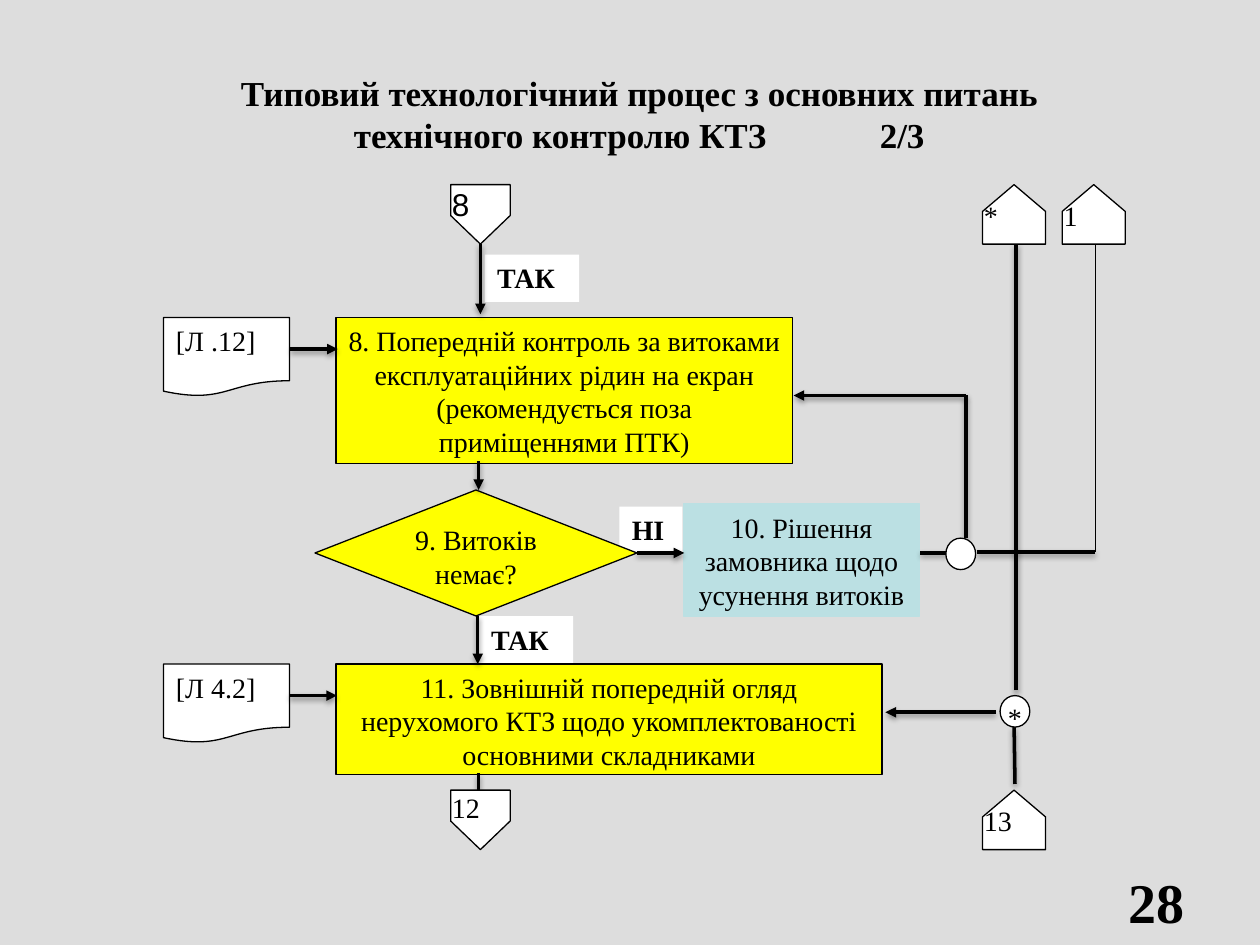
from dataclasses import dataclass

from lxml.etree import SubElement
from pptx import Presentation
from pptx.dml.color import RGBColor
from pptx.enum.shapes import MSO_CONNECTOR, MSO_SHAPE
from pptx.enum.text import MSO_ANCHOR, MSO_AUTO_SIZE, PP_ALIGN
from pptx.oxml.ns import qn
from pptx.util import Pt


@dataclass(frozen=True)
class Theme:
    serif: str = "Times New Roman"
    sans: str = "Arial"
    page: RGBColor = RGBColor(0xDD, 0xDD, 0xDD)
    ink: RGBColor = RGBColor(0, 0, 0)
    paper: RGBColor = RGBColor(0xFF, 0xFF, 0xFF)
    step: RGBColor = RGBColor(0xFF, 0xFF, 0)
    decision: RGBColor = RGBColor(0xBB, 0xE0, 0xE3)
    title: int = 20
    body: int = 16
    entry: int = 18
    number: int = 32
    thin: float = 0.75
    thick: float = 2


theme = Theme()


def write(paragraph, text, size=theme.body, bold=False, font=theme.serif, align=PP_ALIGN.CENTER):
    paragraph.alignment = align
    run = paragraph.add_run()
    run.text = text
    run.font.name = font
    run.font.size = Pt(size)
    run.font.bold = bold
    run.font.color.rgb = theme.ink


def block(kind, box, fill, outline, insets=(7.2, 3.6, 7.2, 3.6)):
    shape = slide.shapes.add_shape(kind, *map(Pt, box))
    shape.shadow.inherit = False
    shape.fill.solid()
    shape.fill.fore_color.rgb = fill
    if outline is None:
        shape.line.fill.background()
    else:
        shape.line.color.rgb = outline
        shape.line.width = Pt(theme.thin)
    frame = shape.text_frame
    frame.word_wrap = True
    frame.vertical_anchor = MSO_ANCHOR.TOP
    frame.margin_left, frame.margin_top, frame.margin_right, frame.margin_bottom = map(Pt, insets)
    return shape


deck = Presentation()
deck.slide_width, deck.slide_height = Pt(720), Pt(540)
slide = deck.slides.add_slide(deck.slide_layouts[5])
slide.background.fill.solid()
slide.background.fill.fore_color.rgb = theme.page

heading = slide.shapes.title
heading.left, heading.top, heading.width, heading.height = Pt(31), Pt(37.5), Pt(669), Pt(55.5)
heading.text_frame.word_wrap = True
heading.text_frame.auto_size = MSO_AUTO_SIZE.NONE
heading.text_frame.vertical_anchor = MSO_ANCHOR.TOP
write(heading.text_frame.paragraphs[0], "Типовий технологічний процес з основних питань", theme.title, True)
part_line = heading.text_frame.add_paragraph()
write(part_line, "\tтехнічного контролю КТЗ\t2/3", theme.title, True, align=PP_ALIGN.LEFT)
stops = SubElement(part_line._p.get_or_add_pPr(), qn("a:tabLst"))
for position in (164, 464.5):
    SubElement(stops, qn("a:tab"), pos=str(Pt(position)), algn="l")

for answer, left, top, width in (
    ("ТАК", 273.5, 352, 54),
    ("НІ", 354, 289.5, 36),
    ("ТАК", 277, 145.5, 54),
):
    label = block(MSO_SHAPE.RECTANGLE, (left, top, width, 27), theme.paper, None)
    write(label.text_frame.paragraphs[0], answer, bold=True, align=PP_ALIGN.LEFT)

for text, box, fill, outline in (
    ("8. Попередній контроль за витоками експлуатаційних рідин на екран "
     "(рекомендується поза приміщеннями ПТК)", (192, 181.5, 261, 83.5), theme.step, theme.ink),
    ("10. Рішення замовника щодо усунення витоків",
     (390.5, 288, 135, 64), theme.decision, theme.decision),
    ("11. Зовнішній попередній огляд нерухомого КТЗ щодо укомплектованості "
     "основними складниками", (192, 379.5, 312, 63), theme.step, theme.ink),
):
    operation = block(MSO_SHAPE.RECTANGLE, box, fill, outline)
    write(operation.text_frame.paragraphs[0], text)

leak_check = block(MSO_SHAPE.DIAMOND, (180, 280, 184, 72), theme.step, theme.ink, (4.3, 0.7, 4.3, 0.7))
write(leak_check.text_frame.paragraphs[0], "9. Витоків немає?")

for reference, top in (("[Л .12]", 181.5), ("[Л 4.2]", 379.5)):
    document = block(MSO_SHAPE.FLOWCHART_DOCUMENT, (93.5, top, 72, 45), theme.paper, theme.ink)
    write(document.text_frame.paragraphs[0], reference, align=PP_ALIGN.LEFT)

for start, end, arrow, weight in (
    ((569, 407), (506, 407), True, theme.thick),
    ((166, 199.5), (193, 199.5), True, theme.thick),
    ((364, 316), (391, 316), True, theme.thick),
    ((526, 316), (541.5, 316), False, theme.thick),
    ((552, 307.5), (552, 226), False, theme.thick),
    ((552, 226), (453.5, 226), True, theme.thick),
    ((273, 352), (273, 379.5), True, theme.thick),
    ((165.5, 397.5), (192.5, 397.5), True, theme.thick),
    ((580, 448), (579.5, 415.5), False, theme.thick),
    ((273.5, 263.5), (273.5, 280), True, theme.thick),
    ((273.5, 442), (273.5, 451.5), False, theme.thick),
    ((626, 315.5), (626, 139.5), False, theme.thin),
    ((274.5, 139.5), (274.5, 179.5), True, theme.thick),
    ((558, 315.5), (626, 315.5), False, theme.thick),
    ((580.5, 394.5), (580.5, 139.5), False, theme.thick),
):
    flow = slide.shapes.add_connector(MSO_CONNECTOR.STRAIGHT, *map(Pt, start + end))
    flow.line.color.rgb = theme.ink
    flow.line.width = Pt(weight)
    if start == (364, 316):
        flow.begin_connect(leak_check, 3)
    if arrow:
        SubElement(flow.line._get_or_add_ln(), qn("a:tailEnd"), type="triangle")
    effects = SubElement(flow._element.spPr, qn("a:effectLst"))
    if weight == theme.thick:
        shadow = SubElement(effects, qn("a:outerShdw"), blurRad=str(Pt(3.1)), dist=str(Pt(1.6)),
                            dir="5400000", rotWithShape="0")
        shade = SubElement(shadow, qn("a:srgbClr"), val=str(theme.ink))
        SubElement(shade, qn("a:alpha"), val="38000")

for mark, left, top in (("", 540.5, 307.5), ("*", 571.5, 397.5)):
    junction = block(MSO_SHAPE.OVAL, (left, top, 17, 18), theme.paper, theme.ink, (0, 0, 0, 0))
    if mark:
        write(junction.text_frame.paragraphs[0], mark)

for mark, left, top, height, points_down, size, font in (
    ("8", 257.5, 105.5, 34, True, theme.entry, theme.sans),
    ("12", 257.5, 451.5, 34, True, theme.body, theme.serif),
    ("*", 562.5, 104.5, 36, False, theme.body, theme.serif),
    ("1", 608, 104.5, 36, False, theme.body, theme.serif),
    ("13", 562.5, 450.5, 36, False, theme.body, theme.serif),
):
    page_link = block(MSO_SHAPE.PENTAGON, (left, top, 34, height), theme.paper, theme.ink, (4.3, 0.7, 0, 0.7))
    page_link.rotation = 270
    page_link.adjustments[0] = 0.48 if points_down else 0.45
    if points_down:
        page_link._element.spPr.xfrm.set("flipH", "1")
    page_link.text_frame._txBody.bodyPr.set("vert", "eaVert")
    write(page_link.text_frame.paragraphs[0], mark, size, font=font)

page_number = slide.shapes.add_textbox(Pt(516), Pt(492), Pt(168), Pt(37.5))
page_number.text_frame.word_wrap = True
write(page_number.text_frame.paragraphs[0], "28", theme.number, True, align=PP_ALIGN.RIGHT)

deck.save("out.pptx")
